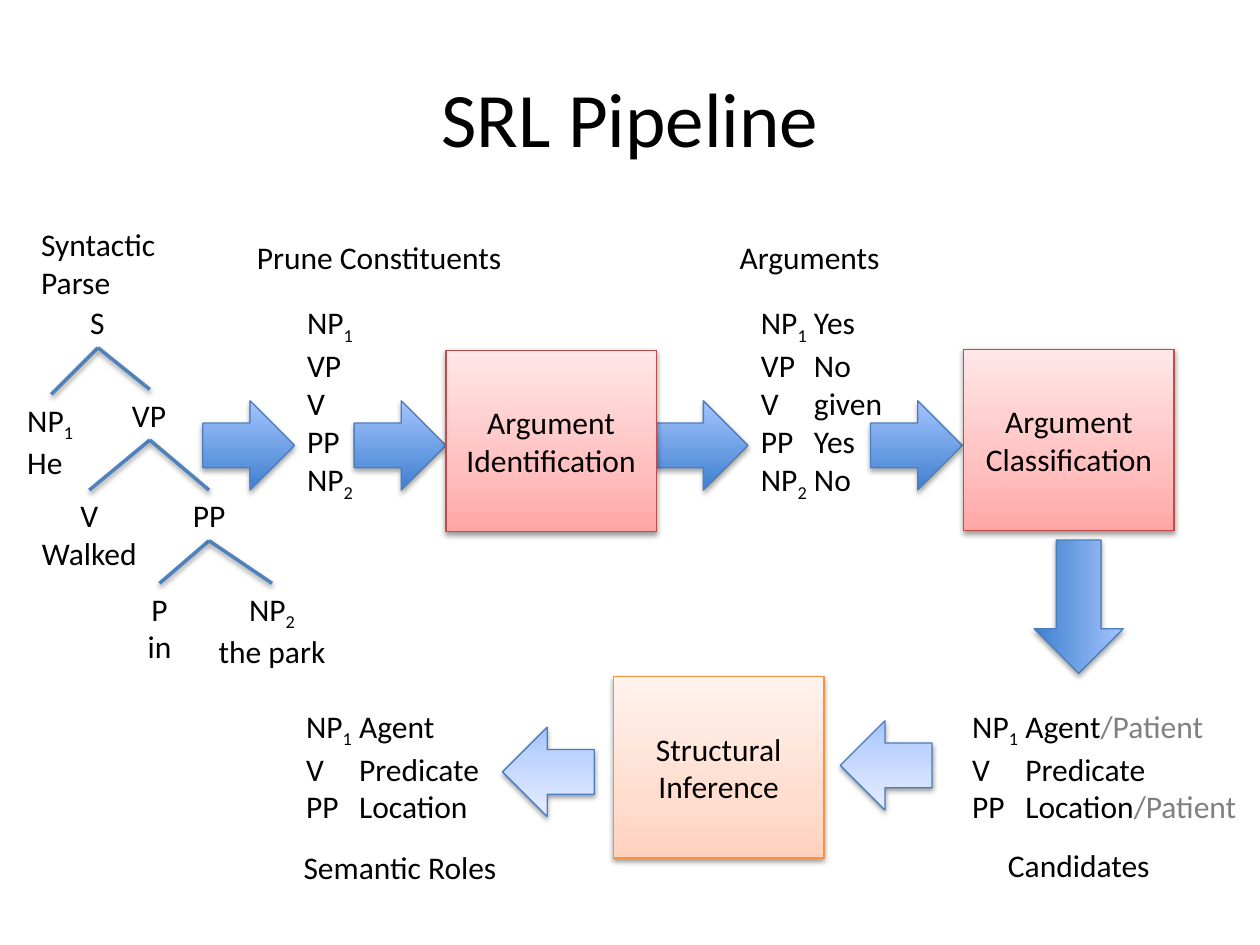
import copy

import pptx
import pptx.dml.color
import pptx.enum.shapes
import pptx.enum.text
import pptx.oxml
import pptx.oxml.ns
import pptx.util

Cm = pptx.util.Cm
Pt = pptx.util.Pt
RGBColor = pptx.dml.color.RGBColor
SHAPE = pptx.enum.shapes.MSO_SHAPE
ALIGN = pptx.enum.text.PP_ALIGN
qn = pptx.oxml.ns.qn

BLACK = RGBColor(0x00, 0x00, 0x00)
GREY = RGBColor(0x80, 0x80, 0x80)
TREE_BLUE = RGBColor(0x4F, 0x81, 0xBD)
ARROW_EDGE = RGBColor(0x4B, 0x7E, 0xBC)
RED_EDGE = RGBColor(0xBF, 0x4C, 0x48)
ORANGE_EDGE = RGBColor(0xF6, 0x92, 0x40)
BLUE = (RGBColor(0x3F, 0x80, 0xCE), RGBColor(0xA4, 0xC4, 0xFF))
PALE_BLUE = (RGBColor(0xA4, 0xC4, 0xFF), RGBColor(0xBF, 0xD4, 0xFF), RGBColor(0xE6, 0xEE, 0xFF))
RED = (RGBColor(0xFF, 0xA6, 0xA5), RGBColor(0xFF, 0xC0, 0xBF), RGBColor(0xFF, 0xE7, 0xE7))
ORANGE = (RGBColor(0xFF, 0xD2, 0xBD), RGBColor(0xFF, 0xDE, 0xD0), RGBColor(0xFF, 0xF2, 0xED))

FONT = "Calibri"
LINE_HEIGHT = 1.02
PAIR_HEIGHT = 1.8
COLUMN_TAB = Cm(1.07)
NP1 = ("NP", "_1")
NP2 = ("NP", "_2")


def add_shadow(item, opacity=38, distance=1.6):
    properties = item._element.spPr
    for effects in properties.findall(qn("a:effectLst")):
        properties.remove(effects)
    properties.append(pptx.oxml.parse_xml(
        f'<a:effectLst {pptx.oxml.ns.nsdecls("a")}>'
        f'<a:outerShdw blurRad="{Pt(3.1)}" dist="{Pt(distance)}" dir="5400000" rotWithShape="0">'
        f'<a:srgbClr val="000000"><a:alpha val="{opacity * 1000}"/></a:srgbClr>'
        '</a:outerShdw></a:effectLst>'))


def add_tab(para):
    properties = para._p.get_or_add_pPr()
    properties.append(pptx.oxml.parse_xml(
        f'<a:tabLst {pptx.oxml.ns.nsdecls("a")}><a:tab pos="{COLUMN_TAB}" algn="l"/></a:tabLst>'))


def write_paragraphs(frame, paragraphs, align):
    for index, spans in enumerate(paragraphs):
        para = frame.paragraphs[0] if index == 0 else frame.add_paragraph()
        para.alignment = align
        spans = (spans,) if isinstance(spans, str) else spans
        if any("\t" in text for text in spans):
            add_tab(para)
        for text in spans:
            span = para.add_run()
            span.text = text.lstrip("_")
            span.font.name = FONT
            span.font.size = Pt(18)
            span.font.color.rgb = GREY if text.startswith("/") else BLACK
            if text.startswith("_"):
                span.font._element.set("baseline", "-25000")


def add_text(page, left, top, width, height, paragraphs, align=ALIGN.LEFT, wrap=False):
    box = page.shapes.add_textbox(Cm(left), Cm(top), Cm(width), Cm(height))
    frame = box.text_frame
    frame.word_wrap = wrap
    frame.auto_size = pptx.enum.text.MSO_AUTO_SIZE.SHAPE_TO_FIT_TEXT
    write_paragraphs(frame, paragraphs, align)
    return box


def fill_gradient(shape, colors):
    shape.fill.gradient()
    shape.fill.gradient_angle = 90
    stop_list = shape._element.spPr.find(qn("a:gradFill")).find(qn("a:gsLst"))
    if len(colors) == 3:
        stop_list.insert(1, copy.deepcopy(stop_list[0]))
    positions = (0, 1) if len(colors) == 2 else (0, 0.35, 1)
    for stop, position, color in zip(shape.fill.gradient_stops, positions, colors):
        stop.position = position
        stop.color.rgb = color


def add_solid(page, kind, left, top, width, height, colors, edge):
    shape = page.shapes.add_shape(kind, Cm(left), Cm(top), Cm(width), Cm(height))
    fill_gradient(shape, colors)
    shape.line.color.rgb = edge
    shape.line.width = Pt(0.75)
    return shape


def add_arrow(page, left, top, colors=BLUE, width=1.85, rotation=0):
    arrow = add_solid(page, SHAPE.RIGHT_ARROW, left, top, width, 1.8, colors, ARROW_EDGE)
    arrow.rotation = rotation
    if colors is BLUE:
        add_shadow(arrow, opacity=35, distance=1.8)
    else:
        add_shadow(arrow)


def add_stage(page, left, top, paragraphs, colors=RED, edge=RED_EDGE):
    stage = add_solid(page, SHAPE.FLOWCHART_PROCESS, left, top, 4.24, 3.66, colors, edge)
    add_shadow(stage)
    frame = stage.text_frame
    frame.word_wrap = True
    frame.vertical_anchor = pptx.enum.text.MSO_ANCHOR.MIDDLE
    write_paragraphs(frame, paragraphs, ALIGN.CENTER)


def add_branch(page, parent, child):
    branch = page.shapes.add_connector(pptx.enum.shapes.MSO_CONNECTOR.STRAIGHT, 0, 0, 0, 0)
    branch.begin_connect(parent, 2)
    branch.end_connect(child, 0)
    branch.line.color.rgb = TREE_BLUE
    branch.line.width = Pt(2)
    add_shadow(branch)


def add_parse_tree(page):
    node_rows = {
        "S": (1.57, 5.99, 0.81, ["S"], ALIGN.LEFT),
        "NP1": (0.3, 7.95, 1.47, [NP1, "He"], ALIGN.LEFT),
        "VP": (2.41, 7.85, 1.22, ["VP"], ALIGN.LEFT),
        "V": (0.58, 9.88, 2.44, ["V", "Walked"], ALIGN.CENTER),
        "PP": (3.63, 9.88, 1.17, ["PP"], ALIGN.CENTER),
        "P": (2.72, 11.76, 0.99, ["P", "in"], ALIGN.CENTER),
        "NP2": (4.09, 11.76, 2.79, [NP2, "the park"], ALIGN.CENTER),
    }
    nodes = {}
    for name, (left, top, width, paragraphs, align) in node_rows.items():
        height = LINE_HEIGHT if len(paragraphs) == 1 else PAIR_HEIGHT
        nodes[name] = add_text(page, left, top, width, height, paragraphs, align)
    children = {"S": ("NP1", "VP"), "VP": ("V", "PP"), "PP": ("P", "NP2")}
    for parent, names in children.items():
        for name in names:
            add_branch(page, nodes[parent], nodes[name])


def add_title(page, text):
    title = page.shapes.title
    title.left, title.top, title.width, title.height = Cm(1.27), Cm(0.76), Cm(22.86), Cm(3.18)
    title.text_frame.text = text
    title.text_frame.vertical_anchor = pptx.enum.text.MSO_ANCHOR.MIDDLE
    para = title.text_frame.paragraphs[0]
    para.alignment = ALIGN.CENTER
    font = para.runs[0].font
    font.name, font.size, font.color.rgb = FONT, Pt(44), BLACK


def main():
    deck = pptx.Presentation()
    deck.slide_width, deck.slide_height = Cm(25.4), Cm(19.05)
    page = deck.slides.add_slide(deck.slide_layouts[5])
    add_title(page, "SRL Pipeline")

    for left in (4.09, 7.14, 13.23, 17.55):
        add_arrow(page, left, 8.08)
    add_arrow(page, 20.4, 11.33, width=2.69, rotation=90)
    for left, top in ((16.94, 14.53), (10.13, 14.66)):
        add_arrow(page, left, top, PALE_BLUE, rotation=180)

    add_stage(page, 8.99, 7.06, ["Argument Identification"])
    add_stage(page, 19.43, 7.04, ["Argument", "Classification"])
    add_stage(page, 12.37, 13.64, ["Structural", "Inference"], ORANGE, ORANGE_EDGE)

    add_parse_tree(page)
    add_text(page, 0.58, 4.42, 2.84, PAIR_HEIGHT, ["Syntactic", "Parse"])
    add_text(page, 4.93, 4.67, 5.51, LINE_HEIGHT, ["Prune Constituents"])
    add_text(page, 14.66, 4.67, 3.35, LINE_HEIGHT, ["Arguments"])
    add_text(page, 20.07, 16.94, 3.61, LINE_HEIGHT, ["Candidates"], wrap=True)
    add_text(page, 5.87, 16.97, 5.03, LINE_HEIGHT, ["Semantic Roles"], wrap=True)

    add_text(page, 5.94, 5.99, 1.47, 4.88, [NP1, "VP", "V", "PP", NP2])
    decisions = [(*NP1, "\tYes"), "VP\tNo", "V\tgiven", "PP\tYes", (*NP2, "\tNo")]
    add_text(page, 15.09, 5.99, 2.95, 4.11, decisions, wrap=True)
    candidates = [(*NP1, "\tAgent", "/Patient"), "V\tPredicate", ("PP\tLocation", "/Patient")]
    add_text(page, 19.35, 14.12, 5.97, 2.57, candidates, wrap=True)
    roles = [(*NP1, "\tAgent"), "V\tPredicate", "PP\tLocation"]
    add_text(page, 5.92, 14.12, 4.06, 2.57, roles, wrap=True)

    deck.save("out.pptx")


if __name__ == "__main__":
    main()
